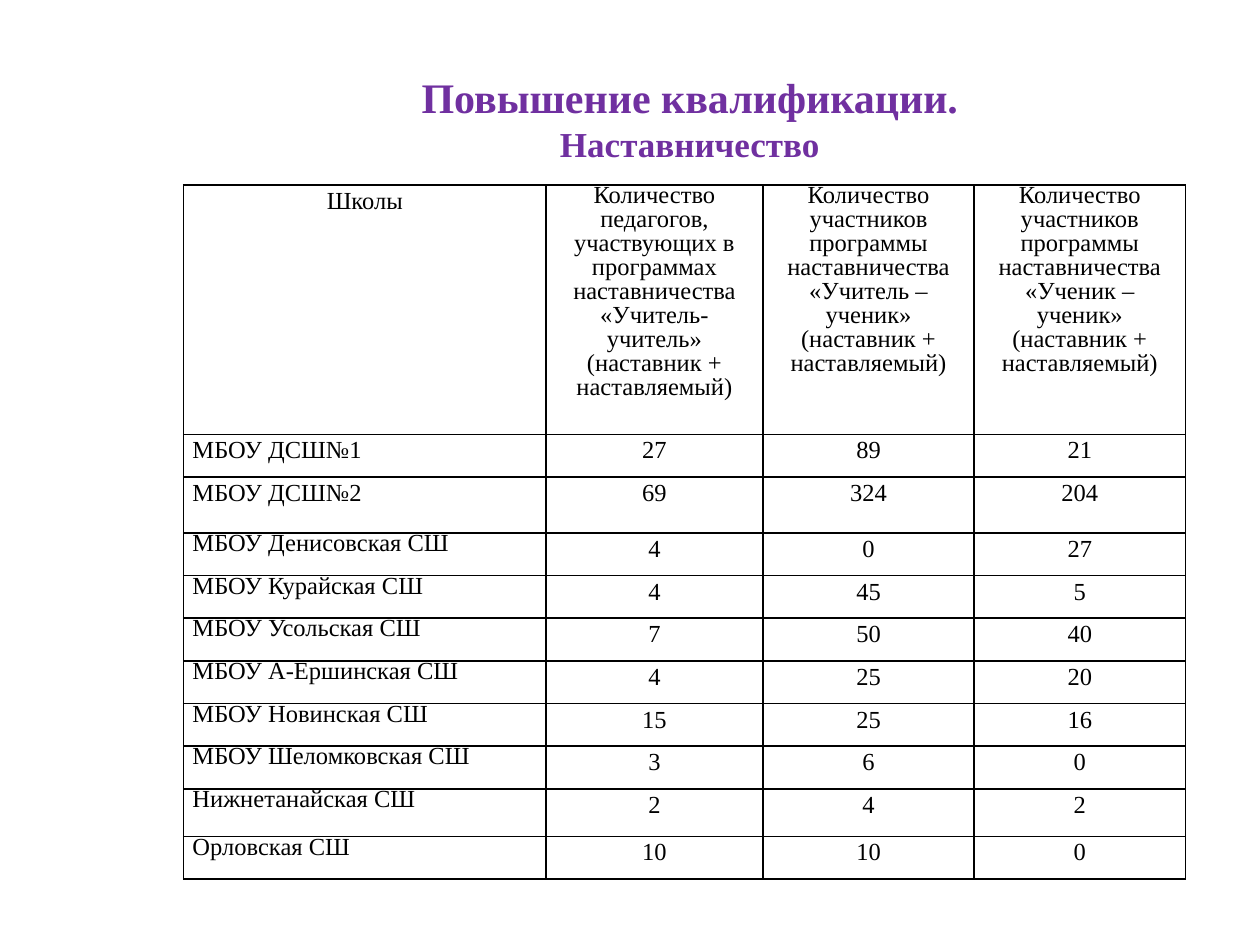
import pptx
import pptx.dml.color
import pptx.enum.text
import pptx.oxml
import pptx.oxml.ns
import pptx.util

Pt = pptx.util.Pt
ALIGN = pptx.enum.text.PP_ALIGN

FONT = "Times New Roman"
PURPLE = pptx.dml.color.RGBColor(0x70, 0x30, 0xA0)
BLACK = pptx.dml.color.RGBColor(0, 0, 0)

TITLE = [("Повышение квалификации.", 24), ("Наставничество", 20)]

MENTORING = ["(наставник +", "наставляемый)"]
HEADER = [
    ["Школы"],
    ["Количество педагогов, участвующих в программах наставничества "
     "«Учитель- учитель»"] + MENTORING,
    ["Количество участников программы наставничества "
     "«Учитель – ученик»"] + MENTORING,
    ["Количество участников программы наставничества "
     "«Ученик – ученик»"] + MENTORING,
]
SCHOOLS = [
    ("МБОУ ДСШ№1", 27, 89, 21),
    ("МБОУ ДСШ№2", 69, 324, 204),
    ("МБОУ Денисовская СШ", 4, 0, 27),
    ("МБОУ Курайская СШ", 4, 45, 5),
    ("МБОУ Усольская СШ", 7, 50, 40),
    ("МБОУ А-Ершинская СШ", 4, 25, 20),
    ("МБОУ Новинская СШ", 15, 25, 16),
    ("МБОУ Шеломковская СШ", 3, 6, 0),
    ("Нижнетанайская СШ", 2, 4, 2),
    ("Орловская СШ", 10, 10, 0),
]

TABLE_LEFT, TABLE_TOP = 105, 105.6
COLUMN_WIDTHS = [207, 124, 120.7, 120.7]
ROW_HEIGHT = 24.4
TALL_ROWS = {0: 142.6, 2: 32, 9: 27.1}
LOOSE, TIGHT = 17.1, 13.7  # line spacing


def format_paragraph(p, text, size, color, align):
    p.text = text
    p.alignment = align
    p.font.name = FONT
    p.font.size = Pt(size)
    p.font.color.rgb = color


def add_borders(cell):
    tcPr = cell._tc.get_or_add_tcPr()
    for side in ("lnL", "lnR", "lnT", "lnB"):
        tcPr.append(pptx.oxml.parse_xml(
            f'<a:{side} {pptx.oxml.ns.nsdecls("a")} w="{Pt(1)}">'
            f'<a:solidFill><a:srgbClr val="{BLACK}"/></a:solidFill></a:{side}>'))


def fill_cell(cell, lines, align, spacing):
    cell.margin_left = cell.margin_right = Pt(5)
    cell.margin_top = cell.margin_bottom = 0
    add_borders(cell)
    cell.fill.background()
    tf = cell.text_frame
    for i, line in enumerate(lines):
        p = tf.add_paragraph() if i else tf.paragraphs[0]
        format_paragraph(p, line, 14, BLACK, align)
        p.line_spacing = Pt(spacing)


def add_title(s):
    title = s.shapes.title
    title.left, title.top = Pt(93.6), Pt(37.4)
    title.width, title.height = Pt(601.2), Pt(60.5)
    tf = title.text_frame
    tf.word_wrap = True
    tf.auto_size = pptx.enum.text.MSO_AUTO_SIZE.NONE
    tf.vertical_anchor = pptx.enum.text.MSO_ANCHOR.TOP
    for i, (text, size) in enumerate(TITLE):
        p = tf.add_paragraph() if i else tf.paragraphs[0]
        format_paragraph(p, text, size, PURPLE, ALIGN.CENTER)
        p.font.bold = True


def add_school_table(s):
    heights = [TALL_ROWS.get(i, ROW_HEIGHT) for i in range(len(SCHOOLS) + 1)]
    table = s.shapes.add_table(
        len(heights), len(COLUMN_WIDTHS), Pt(TABLE_LEFT), Pt(TABLE_TOP),
        Pt(sum(COLUMN_WIDTHS)), Pt(sum(heights))).table
    table.first_row = table.horz_banding = False
    for column, width in zip(table.columns, COLUMN_WIDTHS):
        column.width = Pt(width)
    for row, height in zip(table.rows, heights):
        row.height = Pt(height)

    for c, lines in enumerate(HEADER):
        fill_cell(table.cell(0, c), lines, ALIGN.CENTER, TIGHT if c else LOOSE)
    for r, (school, *counts) in enumerate(SCHOOLS, 1):
        fill_cell(table.cell(r, 0), [school], ALIGN.LEFT,
                  LOOSE if r <= 2 else TIGHT)
        for c, count in enumerate(counts, 1):
            fill_cell(table.cell(r, c), [str(count)], ALIGN.CENTER, LOOSE)


def main():
    prs = pptx.Presentation()
    prs.slide_width, prs.slide_height = Pt(720), Pt(540)
    s = prs.slides.add_slide(prs.slide_layouts.get_by_name("Title Only"))
    add_title(s)
    add_school_table(s)
    prs.save("out.pptx")


if __name__ == "__main__":
    main()
